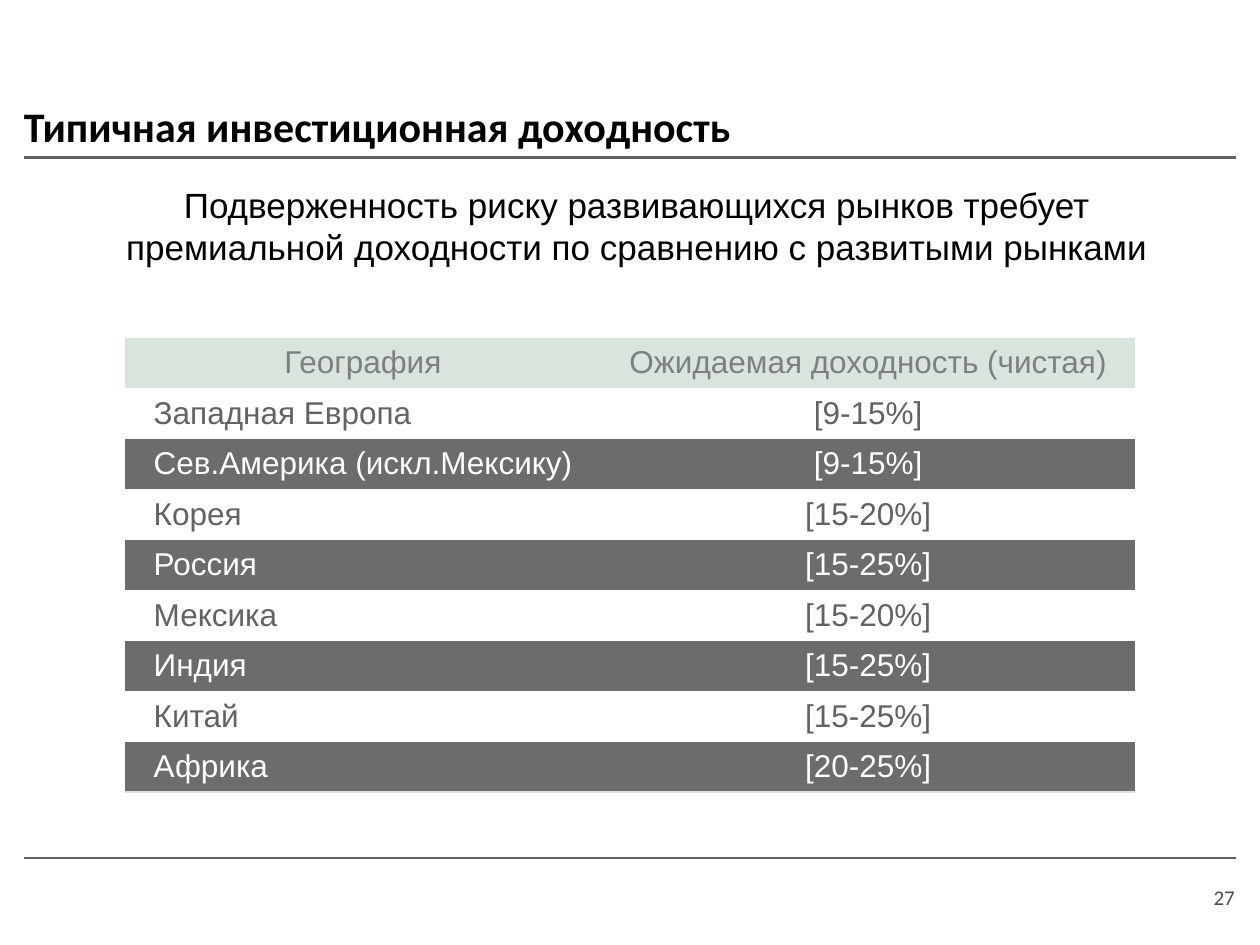
from pptx import Presentation
from pptx.dml.color import RGBColor
from pptx.enum.shapes import MSO_CONNECTOR
from pptx.enum.text import MSO_ANCHOR as Anchor, MSO_AUTO_SIZE as AutoSize, PP_ALIGN as Align
from pptx.oxml import parse_xml
from pptx.oxml.ns import nsdecls, qn
from pptx.util import Inches, Pt

COLORS = {
    "black": "000000",
    "rule": "626265",
    "number": "4D4D4D",
    "header_text": "7F7F7F",
    "header_fill": "D8E4DC",
    "band": "6C6C6C",
    "white": "FFFFFF",
}
NO_STYLE = "{2D5ABB26-0587-4C30-8999-92F81FD0307C}"
HEADER = ("География", "Ожидаемая доходность (чистая)")
RETURNS = [
    ("Западная Европа", "[9-15%]"),
    ("Сев.Америка (искл.Мексику)", "[9-15%]"),
    ("Корея", "[15-20%]"),
    ("Россия", "[15-25%]"),
    ("Мексика", "[15-20%]"),
    ("Индия", "[15-25%]"),
    ("Китай", "[15-25%]"),
    ("Африка", "[20-25%]"),
]


def rgb(name):
    return RGBColor.from_string(COLORS[name])


def write(frame, text, size=18, font="Arial", color="black", bold=False,
          align=Align.LEFT, left=0, first=0):
    paragraph = frame.paragraphs[0]
    paragraph.alignment = align
    paragraph.space_before = Pt(0)
    # Indents in inches, without a bullet
    props = paragraph._p.get_or_add_pPr()
    props.set("marL", str(Inches(left)))
    props.set("indent", str(Inches(first)))
    props.append(parse_xml(f"<a:buNone {nsdecls('a')}/>"))
    run = paragraph.add_run()
    run.text = text
    run.font.size = Pt(size)
    run.font.name = font
    run.font.bold = bold
    run.font.color.rgb = rgb(color)


def set_frame(shape, box, anchor, side=0.1, edge=0.05):
    shape.left, shape.top, shape.width, shape.height = map(Inches, box)
    frame = shape.text_frame
    frame.word_wrap = True
    frame.auto_size = AutoSize.NONE
    frame.vertical_anchor = anchor
    frame.margin_left = frame.margin_right = Inches(side)
    frame.margin_top = frame.margin_bottom = Inches(edge)
    return frame


def add_rule(slide, y, width):
    rule = slide.shapes.add_connector(
        MSO_CONNECTOR.STRAIGHT, Inches(0.19), Inches(y), Inches(9.81), Inches(y))
    rule.line.color.rgb = rgb("rule")
    rule.line.width = Pt(width)
    rule._element.spPr.append(parse_xml(f"<a:effectLst {nsdecls('a')}/>"))


def fill_cell(cell, text, fill=None, **text_format):
    cell.vertical_anchor = Anchor.MIDDLE
    if fill:
        cell.fill.solid()
        cell.fill.fore_color.rgb = rgb(fill)
    else:
        cell.fill.background()
    write(cell.text_frame, text, **text_format)


def add_bottom_border(cell):
    cell._tc.get_or_add_tcPr().insert(0, parse_xml(
        f'<a:lnB {nsdecls("a")} w="{Pt(1)}"><a:solidFill>'
        f'<a:srgbClr val="{COLORS["header_fill"]}"/></a:solidFill></a:lnB>'))


def add_returns_table(slide):
    table = slide.shapes.add_table(
        len(RETURNS) + 1, 2, Inches(0.99), Inches(2.68), Inches(8.02), Inches(3.61)).table
    table._tbl.tblPr.find(qn("a:tableStyleId")).text = NO_STYLE
    table.first_row = table.horz_banding = False
    for column, width in zip(table.columns, (3.78, 4.24)):
        column.width = Inches(width)

    for col, heading in enumerate(HEADER):
        fill_cell(table.cell(0, col), heading, fill="header_fill",
                  color="header_text", align=Align.CENTER)

    # Every second region is a dark band
    for row, (region, expected) in enumerate(RETURNS, start=1):
        dark = row % 2 == 0
        look = {"fill": "band" if dark else None, "color": "white" if dark else "rule"}
        fill_cell(table.cell(row, 0), region, left=0.26, first=-0.13, **look)
        fill_cell(table.cell(row, 1), expected, align=Align.CENTER, **look)

    for col in range(2):
        add_bottom_border(table.cell(len(RETURNS), col))


def main():
    prs = Presentation()
    prs.slide_width, prs.slide_height = Inches(10), Inches(7.5)
    slide = prs.slides.add_slide(prs.slide_layouts[1])

    # Rules above the footer and under the title
    add_rule(slide, 6.81, 1)
    add_rule(slide, 1.25, 1.5)

    # Title and message
    title, message = slide.placeholders
    write(set_frame(title, (0.19, 0.6, 9.62, 0.65), Anchor.BOTTOM, side=0),
          "Типичная инвестиционная доходность", size=24, font="Calibri", bold=True)
    write(set_frame(message, (0.85, 1.41, 8.41, 5.69), Anchor.TOP),
          "Подверженность риску развивающихся рынков требует премиальной "
          "доходности по сравнению с развитыми рынками",
          size=20, align=Align.CENTER)

    add_returns_table(slide)

    # Page number
    number = slide.shapes.add_textbox(0, 0, 0, 0)
    write(set_frame(number, (8.89, 7.04, 0.91, 0.18), Anchor.BOTTOM, side=0, edge=0),
          "27", size=12, font="Calibri", color="number", align=Align.RIGHT)

    prs.save("out.pptx")


if __name__ == "__main__":
    main()
